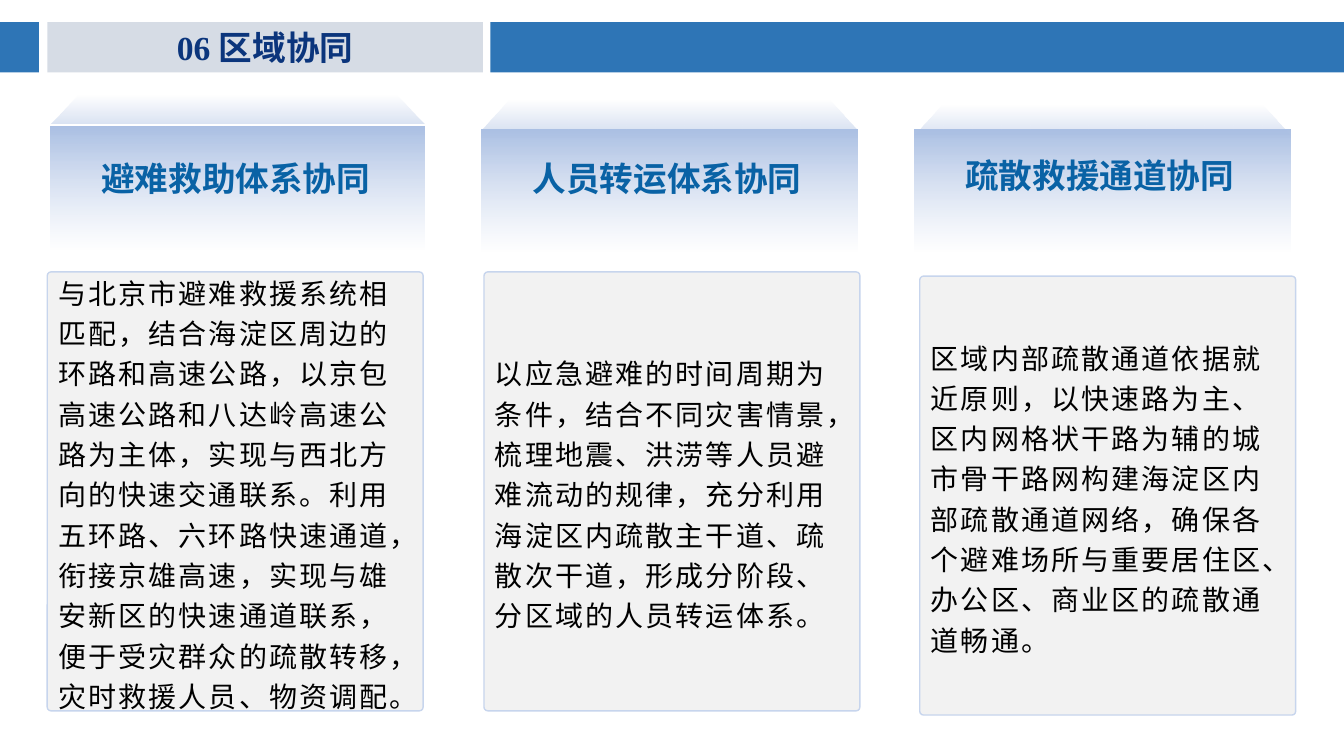
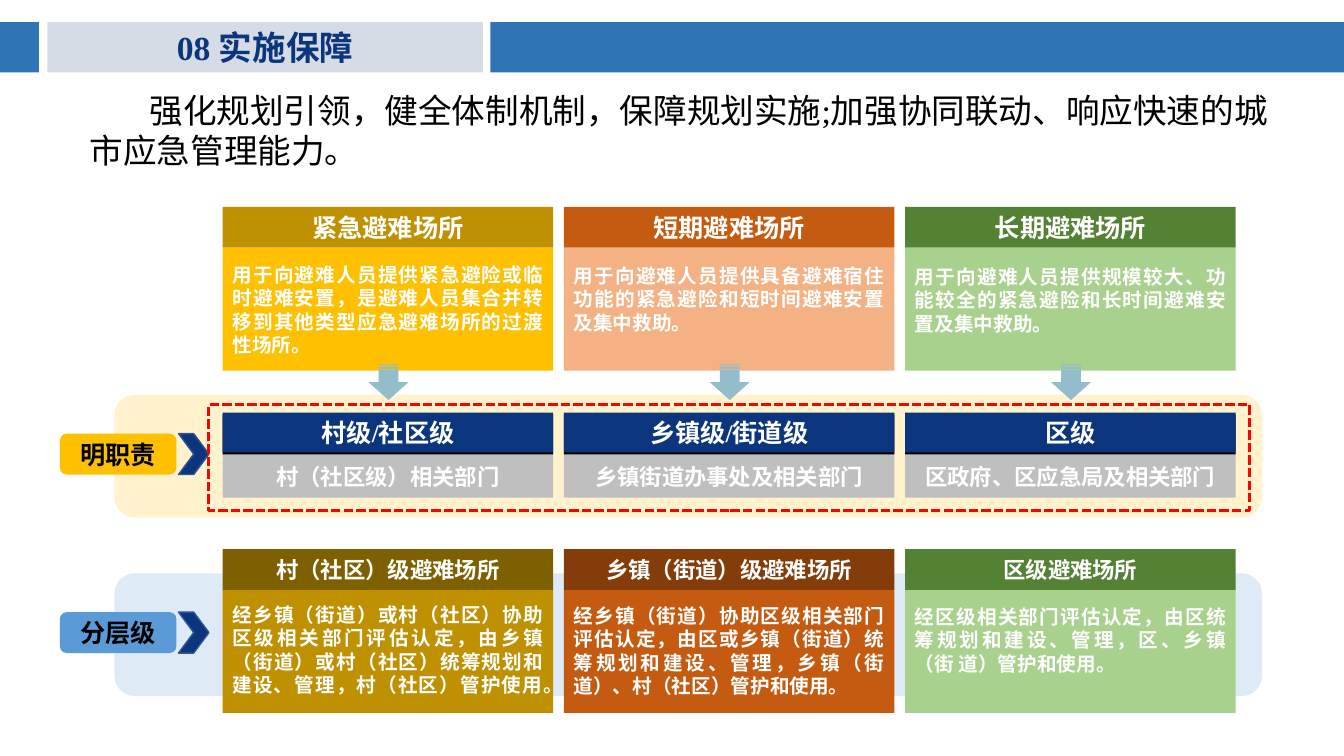
"""Build two slides on regional coordination and implementation safeguards."""
from lxml.etree import SubElement
from pptx import Presentation
from pptx.dml.color import RGBColor
from pptx.enum.dml import MSO_LINE_DASH_STYLE as Dash
from pptx.enum.lang import MSO_LANGUAGE_ID as Language
from pptx.enum.shapes import MSO_SHAPE as Shape
from pptx.enum.text import MSO_ANCHOR as Anchor, MSO_AUTO_SIZE as AutoSize, PP_ALIGN as Align
from pptx.oxml.ns import qn
from pptx.util import Pt

PX = 9525
FONT = "Times New Roman"
WHITE = RGBColor(0xFF, 0xFF, 0xFF)
BLACK = RGBColor(0x00, 0x00, 0x00)
NAVY = RGBColor(0x0B, 0x35, 0x7C)
NAVY_EDGE = RGBColor(0x32, 0x54, 0x91)
BAND_BLUE = RGBColor(0x2E, 0x75, 0xB6)
TITLE_GREY = RGBColor(0xD6, 0xDC, 0xE5)
HEADING_BLUE = RGBColor(0x09, 0x62, 0xA5)
LID_BLUE = RGBColor(0xDA, 0xE3, 0xF3)
FACE_BLUE = RGBColor(0xAB, 0xC0, 0xE4)
PALE_BLUE = RGBColor(0xC7, 0xD5, 0xED)
PANEL_GREY = RGBColor(0xF2, 0xF2, 0xF2)
LEVEL_GREY = RGBColor(0xBF, 0xBF, 0xBF)
GOLD = RGBColor(0xFF, 0xC0, 0x00)
DARK_GOLD = RGBColor(0xBF, 0x91, 0x00)
DEEP_GOLD = RGBColor(0x7E, 0x60, 0x00)
PEACH = RGBColor(0xF4, 0xB1, 0x84)
ORANGE = RGBColor(0xC5, 0x5B, 0x11)
DEEP_ORANGE = RGBColor(0x84, 0x3D, 0x0A)
GREEN = RGBColor(0x53, 0x82, 0x34)
LIGHT_GREEN = RGBColor(0xA8, 0xD1, 0x8D)
CREAM = RGBColor(0xFF, 0xF2, 0xCD)
ICE_BLUE = RGBColor(0xDE, 0xEA, 0xF6)
TAG_BLUE = RGBColor(0x5A, 0x9A, 0xD6)
RED = RGBColor(0xFF, 0x00, 0x00)
ARROW_TEAL = RGBColor(0x94, 0xBD, 0xCB)

COLUMN_LEFT, COLUMN_STEP, COLUMN_WIDTH = 212, 325, 315

COORDINATION = [
    ((48, 91, 356), 121, 146, (45, 259), "避难救助体系协同",
     "与北京市避难救援系统相匹配，结合海淀区周边的环路和高速公路，以京包高速公路和八达岭高速公路为主体，"
     "实现与西北方向的快速交通联系。利用五环路、六环路快速通道，衔接京雄高速，实现与雄安新区的快速通道联系，"
     "便于受灾群众的疏散转移，灾时救援人员、物资调配。"),
    ((459, 96, 358), 123, 146, (461, 259), "人员转运体系协同",
     "以应急避难的时间周期为条件，结合不同灾害情景，梳理地震、洪涝等人员避难流动的规律，"
     "充分利用海淀区内疏散主干道、疏散次干道，形成分阶段、分区域的人员转运体系。"),
    ((871, 101, 358), 123, 143, (876, 263), "疏散救援通道协同",
     "区域内部疏散通道依据就近原则，以快速路为主、区内网格状干路为辅的城市骨干路网构建海淀区内部疏散通道网络，"
     "确保各个避难场所与重要居住区、办公区、商业区的疏散通道畅通。"),
]
SHELTER_TYPES = [
    ("紧急避难场所", DARK_GOLD, GOLD,
     "用于向避难人员提供紧急避险或临时避难安置，是避难人员集合并转移到其他类型应急避难场所的过渡性场所。"),
    ("短期避难场所", ORANGE, PEACH,
     "用于向避难人员提供具备避难宿住功能的紧急避险和短时间避难安置及集中救助。"),
    ("长期避难场所", GREEN, LIGHT_GREEN,
     "用于向避难人员提供规模较大、功能较全的紧急避险和长时间避难安置及集中救助。"),
]
LEVELS = [
    ("村级/社区级", "村（社区级）相关部门"),
    ("乡镇级/街道级", "乡镇街道办事处及相关部门"),
    ("区级", "区政府、区应急局及相关部门"),
]
SHELTER_LEVELS = [
    ("村（社区）级避难场所", DEEP_GOLD, DARK_GOLD,
     "经乡镇（街道）或村（社区）协助区级相关部门评估认定，由乡镇（街道）或村（社区）统筹规划和建设、管理，"
     "村（社区）管护使用。"),
    ("乡镇（街道）级避难场所", DEEP_ORANGE, ORANGE,
     "经乡镇（街道）协助区级相关部门评估认定，由区或乡镇（街道）统筹规划和建设、管理，"
     "乡镇（街道）、村（社区）管护和使用。"),
    ("区级避难场所", GREEN, LIGHT_GREEN,
     "经区级相关部门评估认定，由区统筹规划和建设、管理，区、乡镇（街 道）管护和使用。"),
]


def scale(*lengths):
    """Turn pixel lengths into EMU."""
    return [length * PX for length in lengths]


def write(shape, text, size, color, bold=True, align=Align.CENTER, anchor=Anchor.MIDDLE):
    """Set one formatted paragraph in a shape and return it."""
    frame = shape.text_frame
    frame.text = text
    frame.word_wrap = True
    frame.auto_size = AutoSize.NONE
    frame.vertical_anchor = anchor
    paragraph = frame.paragraphs[0]
    paragraph.alignment = align
    font = paragraph.runs[0].font
    font.name, font.size, font.bold = FONT, Pt(size), bold
    font.color.rgb = color
    font.language_id = Language.SIMPLIFIED_CHINESE
    return paragraph


def add_box(slide, box, fill=None, kind=Shape.RECTANGLE, line=None, line_width=1):
    """Add a preset shape with a flat fill and an optional outline."""
    shape = slide.shapes.add_shape(kind, *scale(*box))
    shape.shadow.inherit = False
    if fill is None:
        shape.fill.background()
    else:
        shape.fill.solid()
        shape.fill.fore_color.rgb = fill
    if line is None:
        shape.line.fill.background()
    else:
        shape.line.color.rgb = line
        shape.line.width = Pt(line_width)
    return shape


def add_text(slide, box, text, size, color, bold=True):
    """Add a left-aligned text box and return its paragraph."""
    shape = slide.shapes.add_textbox(*scale(*box))
    return write(shape, text, size, color, bold, Align.LEFT, Anchor.TOP)


def fade(shape, top, bottom, clear_stop):
    """Fill a shape from top to bottom with one fully transparent stop."""
    shape.fill.gradient()
    shape.fill.gradient_angle = 270
    for position, (stop, color) in enumerate(zip(shape.fill.gradient_stops, (top, bottom))):
        stop.position = position
        stop.color.rgb = color
    colors = shape._element.xpath("./p:spPr/a:gradFill//a:srgbClr")
    SubElement(colors[clear_stop], qn("a:alpha")).set("val", "0")


def add_titled_slide(presentation, title):
    """Add a slide with the shared title block and blue bands."""
    slide = presentation.slides.add_slide(presentation.slide_layouts[5])
    heading = slide.shapes.title
    heading.left, heading.top, heading.width, heading.height = scale(45, 21, 415, 48)
    heading.fill.solid()
    heading.fill.fore_color.rgb = TITLE_GREY
    write(heading, title, 24, NAVY)
    for left, width in ((0, 37), (467, 813)):
        add_box(slide, (left, 21, width, 48), BAND_BLUE)
    return slide


def add_coordination_card(slide, lid_box, face_top, heading_top, panel_corner, heading, text):
    """Add a fading block with a heading above a text panel."""
    left, lid_top, width = lid_box
    lid = add_box(slide, (left, lid_top, width, 27), LID_BLUE, Shape.TRAPEZOID)
    lid.adjustments[0] = 0.98
    fade(lid, LID_BLUE, LID_BLUE, 0)
    face = add_box(slide, (left, face_top, width, 117), FACE_BLUE)
    fade(face, FACE_BLUE, PALE_BLUE, 1)
    add_text(slide, (left + 39, heading_top, 283, 48), heading, 24, HEADING_BLUE)
    panel = add_box(slide, (*panel_corner, 358, 418), PANEL_GREY, Shape.ROUNDED_RECTANGLE, PALE_BLUE)
    panel.adjustments[0] = 0.01
    paragraph = write(panel, text, 20, BLACK, False, Align.LEFT)
    paragraph.line_spacing = 1.2
    paragraph.runs[0].font._element.set("spc", "150")


def add_shelter_row(slide, top, header_size, text_inset, shelters):
    """Add a row of coloured cards with a header and a description."""
    for column, (title, dark, light, text) in enumerate(shelters):
        left = COLUMN_LEFT + column * COLUMN_STEP
        header = add_box(slide, (left, top, COLUMN_WIDTH, 39), dark)
        write(header, title, header_size, WHITE)
        body = add_box(slide, (left, top + 39, COLUMN_WIDTH, 117), light)
        write(body, text, 14, WHITE, True, Align.JUSTIFY, Anchor.TOP)
        body.text_frame.margin_top = (text_inset + column) * PX


def add_tagged_band(slide, top, band_color, tag, tag_color):
    """Add a rounded band with a tag and a chevron at its left end."""
    add_box(slide, (109, top, 1093, 117), band_color, Shape.ROUNDED_RECTANGLE)
    label = add_box(slide, (57, top + 37, 111, 39), tag_color, Shape.ROUNDED_RECTANGLE)
    write(label, tag, 18, BLACK)
    add_box(slide, (170, top + 37, 29, 39), NAVY, Shape.CHEVRON, NAVY_EDGE)


def add_level_row(slide):
    """Add the three responsibility levels inside a dashed frame."""
    for column, (level, department) in enumerate(LEVELS):
        left = COLUMN_LEFT + column * COLUMN_STEP
        add_box(slide, (left, 395, COLUMN_WIDTH, 38), BLACK)
        grey = add_box(slide, (left, 433, COLUMN_WIDTH, 41), LEVEL_GREY)
        write(grey, department, 16, WHITE)
        header = add_box(slide, (left, 393, COLUMN_WIDTH, 38), NAVY)
        write(header, level, 18, WHITE)
    frame = add_box(slide, (199, 385, 991, 101), line=RED, line_width=2.25)
    frame.line.dash_style = Dash.SQUARE_DOT


def add_down_arrows(slide):
    """Add one downward arrow under each shelter type."""
    for column in range(len(SHELTER_TYPES)):
        left = COLUMN_LEFT + column * COLUMN_STEP + 141
        arrow = add_box(slide, (left, 345, 34, 38), ARROW_TEAL, Shape.STRIPED_RIGHT_ARROW)
        arrow.rotation = 90


def build_coordination(presentation):
    """Build the regional coordination slide."""
    slide = add_titled_slide(presentation, "06 区域协同")
    for card in COORDINATION:
        add_coordination_card(slide, *card)


def build_safeguards(presentation):
    """Build the implementation safeguards slide."""
    slide = add_titled_slide(presentation, "08 实施保障")
    intro = add_text(slide, (76, 81, 1147, 87),
                     "强化规划引领，健全体制机制，保障规划实施;加强协同联动、响应快速的城市应急管理能力。",
                     24, BLACK, False)
    intro._p.get_or_add_pPr().set("indent", str(57 * PX))
    add_shelter_row(slide, 197, 18, 14, SHELTER_TYPES)
    add_tagged_band(slide, 376, CREAM, "明职责", GOLD)
    add_level_row(slide)
    add_tagged_band(slide, 546, ICE_BLUE, "分层级", TAG_BLUE)
    add_shelter_row(slide, 523, 16, 12, SHELTER_LEVELS)
    add_down_arrows(slide)


def main():
    """Build and save the presentation."""
    presentation = Presentation()
    presentation.slide_width, presentation.slide_height = scale(1280, 720)
    build_coordination(presentation)
    build_safeguards(presentation)
    presentation.save("out.pptx")


if __name__ == "__main__":
    main()
